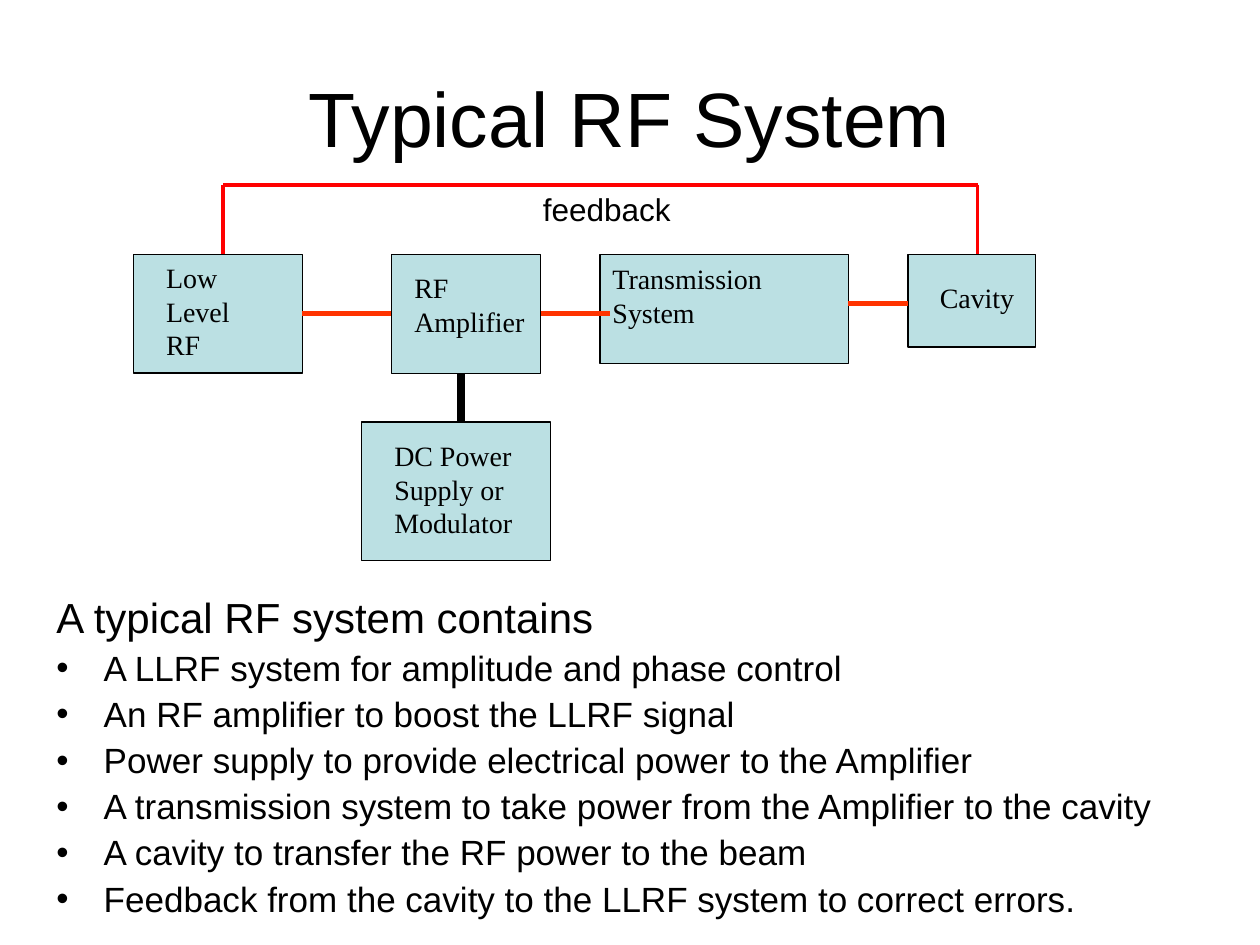
from pptx import Presentation, util as u
from pptx.dml.color import RGBColor
from pptx.enum import shapes, text
from pptx.oxml.ns import qn
from lxml import etree

BLACK = RGBColor(0x00, 0x00, 0x00)
PALE_BLUE = RGBColor(0xBB, 0xE0, 0xE3)
ORANGE = RGBColor(0xFF, 0x33, 0x00)
RED = RGBColor(0xFF, 0x00, 0x00)
SANS, SERIF = "Arial", "Times New Roman"


def pts(*values):
    return [u.Pt(v) for v in values]


class Diagram:
    def __init__(self, slide):
        self.s = slide

    def run(self, p, words, size, font):
        r = p.add_run()
        r.text = words
        r.font.size, r.font.name = u.Pt(size), font
        r.font.color.rgb = BLACK

    def title(self, words, *place):
        sp = self.s.shapes.title
        sp.left, sp.top, sp.width, sp.height = pts(*place)
        tf = sp.text_frame
        tf.vertical_anchor = text.MSO_ANCHOR.MIDDLE
        p = tf.paragraphs[0]
        p.alignment = text.PP_ALIGN.CENTER
        self.run(p, words, 44, SANS)

    def box(self, *place):
        sp = self.s.shapes.add_shape(shapes.MSO_SHAPE.RECTANGLE, *pts(*place))
        sp.shadow.inherit = False
        sp.fill.solid()
        sp.fill.fore_color.rgb = PALE_BLUE
        sp.line.color.rgb = BLACK
        sp.line.width = u.Pt(0.75)

    def line(self, x1, y1, x2, y2, color, width):
        c = self.s.shapes.add_connector(
            shapes.MSO_CONNECTOR.STRAIGHT, *pts(x1, y1, x2, y2))
        c.line.color.rgb = color
        c.line.width = u.Pt(width)
        etree.SubElement(c._element.spPr, qn("a:effectLst"))

    def label(self, lines, place, size=16, font=SERIF, wrap=True):
        tf = self.s.shapes.add_textbox(*pts(*place)).text_frame
        tf.word_wrap = wrap
        for i, words in enumerate(lines):
            p = tf.add_paragraph() if i else tf.paragraphs[0]
            self.run(p, words, size, font)

    def bullets(self, heading, items, *place):
        tf = self.s.shapes.add_textbox(*pts(*place)).text_frame
        tf.word_wrap = True
        for i, words in enumerate([heading] + items):
            p = tf.add_paragraph() if i else tf.paragraphs[0]
            pPr = p._p.get_or_add_pPr()
            pPr.set("marL", str(u.Pt(27)))
            pPr.set("indent", str(u.Pt(-27)))
            p.line_spacing = 0.9
            if i:
                p.space_before = u.Pt(4.8)
                etree.SubElement(pPr, qn("a:buFont")).set("typeface", SANS)
                etree.SubElement(pPr, qn("a:buChar")).set("char", "•")
            self.run(p, words, 20 if i else 24, SANS)


def main():
    prs = Presentation()
    prs.slide_width, prs.slide_height = pts(720, 540)
    d = Diagram(prs.slides.add_slide(prs.slide_layouts[5]))
    d.title("Typical RF System", 36, 21.6, 648, 90)

    row_top = 145.3
    d.box(206.7, 241.2, 108, 79.2)
    for left, width, height in [(76.3, 96.5, 67.9), (223.7, 85.2, 68.2),
                                (342.9, 141.9, 62.4), (518.9, 72.8, 53)]:
        d.box(left, row_top, width, height)

    for x1, x2, y in [(172.8, 223.7, 179.2), (308.9, 348.5, 179.2),
                      (484.8, 518.9, 173.5)]:
        d.line(x1, y, x2, y, ORANGE, 3)
    d.line(263.5, 213.5, 263.5, 241.6, BLACK, 4.5)

    d.label(["Low Level RF"], (87.8, row_top, 72.7, 65))
    d.label(["RF", "Amplifier"], (229.7, 151.2, 77.8, 46), wrap=False)
    d.label(["Transmission System"], (342.9, 146, 102.2, 46))
    d.label(["Cavity"], (530, 157, 57.6, 26.6), wrap=False)
    d.label(["DC Power Supply or Modulator"], (218.2, 247, 118.8, 65))

    d.bullets("A typical RF system contains", [
        "A LLRF system for amplitude and phase control",
        "An RF amplifier to boost the LLRF signal",
        "Power supply to provide electrical power to the Amplifier",
        "A transmission system to take power from the Amplifier to the cavity",
        "A cavity to transfer the RF power to the beam",
        "Feedback from the cavity to the LLRF system to correct errors.",
    ], 25.2, 337.7, 648, 200)

    start, end, loop_top = 127.5, 558.6, 105.6
    d.line(start, row_top, start, loop_top, RED, 2)
    d.line(start, loop_top, end, loop_top, RED, 2)
    d.line(end, loop_top, end, row_top, RED, 2)
    d.label(["feedback"], (303.1, 105.1, 215.3, 28.8), 18, SANS)

    prs.save("out.pptx")


if __name__ == "__main__":
    main()
